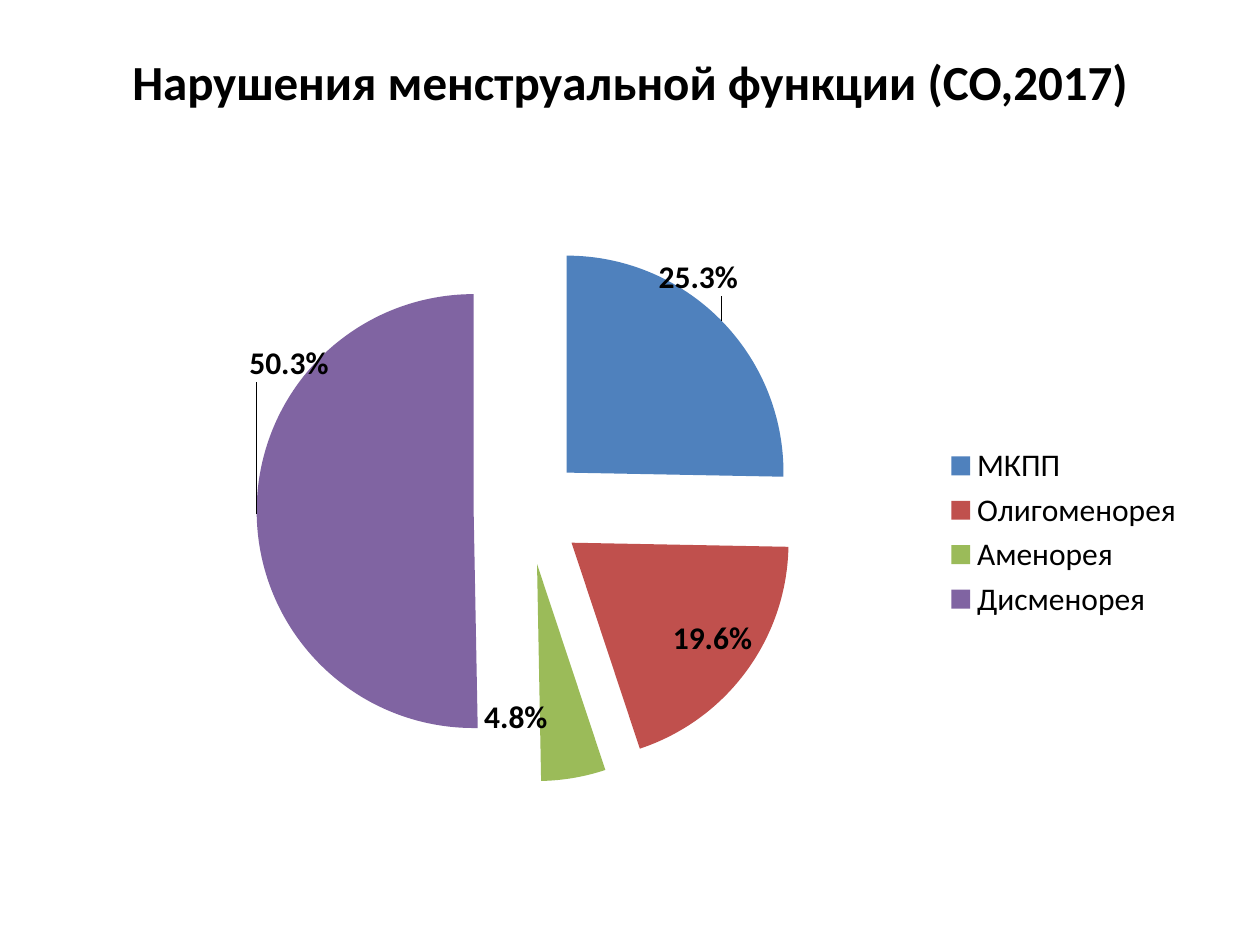
from pptx import Presentation
from pptx.chart.data import CategoryChartData
from pptx.dml.color import RGBColor
from pptx.enum.chart import XL_CHART_TYPE, XL_LABEL_POSITION, XL_LEGEND_POSITION
from pptx.enum.text import MSO_ANCHOR, PP_ALIGN
from pptx.oxml import parse_xml
from pptx.oxml.ns import nsdecls
from pptx.util import Cm, Pt

BLACK = RGBColor(0x00, 0x00, 0x00)
BLUE = RGBColor(0x4F, 0x81, 0xBD)
RED = RGBColor(0xC0, 0x50, 0x4D)
GREEN = RGBColor(0x9B, 0xBB, 0x59)
PURPLE = RGBColor(0x80, 0x64, 0xA2)

FONT = "Calibri"
TITLE = "Нарушения менструальной функции (СО,2017)"
PERCENT_FORMAT = "0.0%"
EXPLOSION = 25
PLOT_BOX = {"x": 0.17, "y": 0.03, "w": 0.48, "h": 0.87}
DISORDERS = [
    ("МКПП", 0.253, BLUE, {"x": -0.06, "y": -0.03}),
    ("Олигоменорея", 0.196, RED, {"x": -0.07, "y": -0.09}),
    ("Аменорея", 0.048, GREEN, {"x": -0.08, "y": -0.14}),
    ("Дисменорея", 0.503, PURPLE, {"x": 0.07, "y": -0.24}),
]


def style_font(font, size, bold):
    font.name = FONT
    font.size = Pt(size)
    font.bold = bold
    font.color.rgb = BLACK


def manual_layout(values, prefix=""):
    parts = "".join(f'<c:{key} val="{value}"/>' for key, value in values.items())
    return parse_xml(
        f'<c:layout {nsdecls("c")}><c:manualLayout>{prefix}{parts}'
        "</c:manualLayout></c:layout>"
    )


def set_plot_layout(chart):
    plot_area = chart._chartSpace.xpath("c:chart/c:plotArea")[0]
    for layout in plot_area.xpath("c:layout"):
        plot_area.remove(layout)
    prefix = (
        '<c:layoutTarget val="inner"/>'
        '<c:xMode val="edge"/><c:yMode val="edge"/>'
    )
    plot_area.insert(0, manual_layout(PLOT_BOX, prefix))


def add_title(slide, left, top, width, height):
    shape = slide.shapes.add_textbox(left, top, width, height)
    frame = shape.text_frame
    frame.word_wrap = True
    frame.vertical_anchor = MSO_ANCHOR.MIDDLE
    paragraph = frame.paragraphs[0]
    paragraph.alignment = PP_ALIGN.CENTER
    run = paragraph.add_run()
    run.text = TITLE
    style_font(run.font, 28, True)


def style_slices(series):
    labels = series.data_labels
    labels.show_value = True
    labels.number_format = PERCENT_FORMAT
    labels.number_format_is_linked = False
    labels.position = XL_LABEL_POSITION.OUTSIDE_END
    style_font(labels.font, 18, True)
    for index, (_, _, color, offset) in enumerate(DISORDERS):
        point = series.points[index]
        point.format.fill.solid()
        point.format.fill.fore_color.rgb = color
        style_font(point.data_label.font, 18, True)
        point.data_label.position = XL_LABEL_POSITION.OUTSIDE_END
        label = series._element.xpath("c:dLbls/c:dLbl")[index]
        number_format = parse_xml(
            f'<c:numFmt {nsdecls("c")} formatCode="{PERCENT_FORMAT}" sourceLinked="0"/>'
        )
        label.insert(1, manual_layout(offset))
        label.insert(2, number_format)
    explosion = parse_xml(f'<c:explosion {nsdecls("c")} val="{EXPLOSION}"/>')
    series._element.xpath("c:dPt")[0].addprevious(explosion)


def add_disorder_chart(slide, left, top, width, height):
    data = CategoryChartData(number_format=PERCENT_FORMAT)
    data.categories = [name for name, *_ in DISORDERS]
    data.add_series("Series 1", [value for _, value, *_ in DISORDERS])
    chart = slide.shapes.add_chart(
        XL_CHART_TYPE.PIE, left, top, width, height, data
    ).chart
    chart.has_title = False
    style_font(chart.font, 18, False)
    chart.has_legend = True
    chart.legend.position = XL_LEGEND_POSITION.RIGHT
    chart.legend.include_in_layout = False
    plot = chart.plots[0]
    plot.vary_by_categories = True
    style_slices(plot.series[0])
    set_plot_layout(chart)


def main():
    presentation = Presentation()
    presentation.slide_width = Cm(25.4)
    presentation.slide_height = Cm(19.05)
    slide = presentation.slides.add_slide(presentation.slide_layouts[6])
    margin = Cm(1.27)
    width = presentation.slide_width - 2 * margin
    add_title(slide, margin, Cm(0.76), width, Cm(1.75))
    add_disorder_chart(slide, margin, Cm(4.45), width, Cm(12.57))
    presentation.save("out.pptx")


if __name__ == "__main__":
    main()
